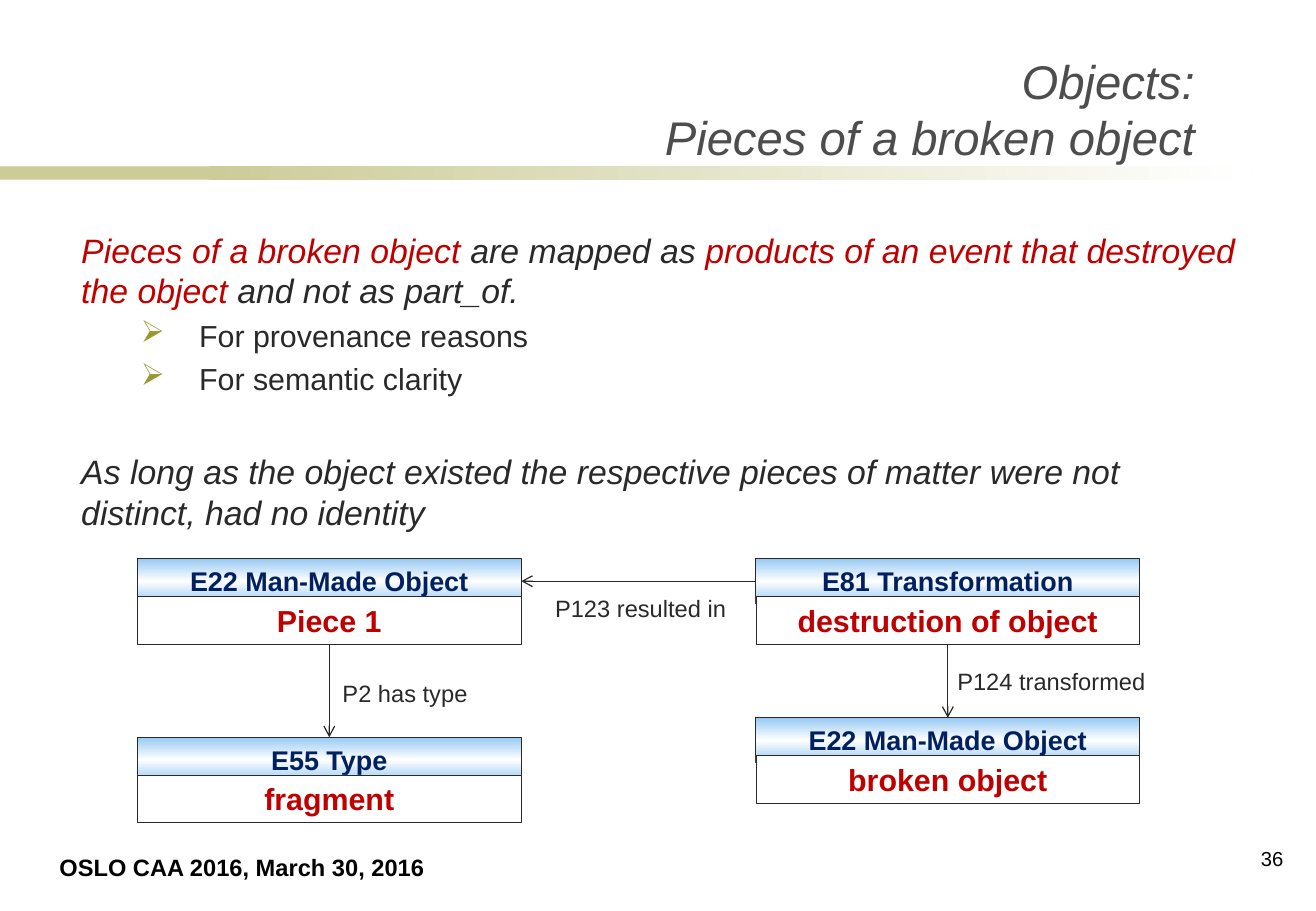
import copy
import pptx
import pptx.util
import pptx.dml.color
import pptx.enum.shapes
import pptx.enum.text
import pptx.oxml.ns
from lxml import etree

Inches, Pt = pptx.util.Inches, pptx.util.Pt
RGBColor = pptx.dml.color.RGBColor
Align = pptx.enum.text.PP_ALIGN
Anchor = pptx.enum.text.MSO_ANCHOR
RECT = pptx.enum.shapes.MSO_SHAPE.RECTANGLE
LINE = pptx.enum.shapes.MSO_CONNECTOR.STRAIGHT
qn = pptx.oxml.ns.qn

BLACK = RGBColor(0x00, 0x00, 0x00)
WHITE = RGBColor(0xFF, 0xFF, 0xFF)
DARK = RGBColor(0x29, 0x29, 0x29)
GREY = RGBColor(0x4D, 0x4D, 0x4D)
RED = RGBColor(0xC0, 0x00, 0x00)
NAVY = RGBColor(0x00, 0x20, 0x60)
SKY = RGBColor(0x97, 0xC9, 0xF3)
SAND = RGBColor(0xCC, 0xCC, 0x99)

deck = pptx.Presentation()
deck.slide_width, deck.slide_height = Inches(10.83), Inches(7.5)
slide = deck.slides.add_slide(deck.slide_layouts[6])
shapes = slide.shapes


def add_run(para, text, size, color, bold=False, italic=False):
    run = para.add_run()
    run.text = text
    font = run.font
    font.name, font.size = "Arial", Pt(size)
    font.bold, font.italic = bold, italic
    font.color.rgb = color


def add_rect(left, top, width, height, colors, angle=0):
    rect = shapes.add_shape(RECT, Inches(left), Inches(top), Inches(width), Inches(height))
    rect.shadow.inherit = False
    rect.line.fill.background()
    fill = rect.fill
    if len(colors) == 1:
        fill.solid()
        fill.fore_color.rgb = colors[0]
        return rect
    fill.gradient()
    fill.gradient_angle = angle
    stops = rect.element.spPr.find(".//" + qn("a:gsLst"))
    for _ in colors[2:]:
        stops.append(copy.deepcopy(stops[0]))
    for i, (stop, color) in enumerate(zip(fill.gradient_stops, colors)):
        stop.position = i / (len(colors) - 1)
        stop.color.rgb = color
    return rect


# Band under the title
add_rect(0, 1.37, 2.53, 0.11, [SAND])
add_rect(1.72, 1.37, 8.58, 0.11, [SAND, WHITE])

# Title
title = shapes.add_textbox(Inches(2.11), Inches(0.13), Inches(7.82), Inches(1.28)).text_frame
title.word_wrap = True
title.vertical_anchor = Anchor.BOTTOM
para = title.paragraphs[0]
para.alignment = Align.RIGHT
add_run(para, "Objects:", 28, GREY, italic=True)
para.add_line_break()
add_run(para, "Pieces of a broken object", 28, GREY, italic=True)

# Body: bullet flag, space before, runs
body = shapes.add_textbox(Inches(0.57), Inches(1.84), Inches(9.75), Inches(2.71)).text_frame
body.word_wrap = True
points = [
    (False, 0, [("Pieces of a broken object ", RED), ("are mapped as ", DARK),
                ("products of an event that destroyed the object ", RED),
                ("and not as part_of.", DARK)]),
    (True, 4, [("For provenance reasons", DARK)]),
    (True, 4, [("For semantic clarity", DARK)]),
    (False, 32, [("As long as the object existed the respective pieces of matter "
                  "were not distinct, had no identity", DARK)]),
]
for i, (bullet, space, runs) in enumerate(points):
    para = body.add_paragraph() if i else body.paragraphs[0]
    para.space_before = Pt(space)
    if bullet:
        props = para._p.get_or_add_pPr()
        props.set("marL", str(Inches(0.97)))
        props.set("indent", str(Inches(-0.48)))
        tint = etree.SubElement(props, qn("a:buClr"))
        etree.SubElement(tint, qn("a:srgbClr"), val="999933")
        etree.SubElement(props, qn("a:buChar"), char="➢")
    for text, color in runs:
        add_run(para, text, 18 if bullet else 20, color, italic=not bullet)

# Entity boxes: class on top, instance below
cards = []
for left, top, kind, name in [
    (1.13, 4.6, "E22 Man-Made Object", "Piece 1"),
    (6.22, 4.6, "E81 Transformation", "destruction of object"),
    (1.13, 6.07, "E55 Type", "fragment"),
    (6.22, 5.91, "E22 Man-Made Object", "broken object"),
]:
    head = add_rect(left, top, 3.16, 0.37, [SKY, WHITE, SKY], 90)
    foot = add_rect(left, top + 0.31, 3.16, 0.39, [WHITE])
    for box, text, size, color, width, anchor in [
        (head, kind, 16, NAVY, 0.75, Anchor.TOP),
        (foot, name, 18, RED, 0.25, Anchor.MIDDLE),
    ]:
        box.line.color.rgb = DARK
        box.line.width = Pt(width)
        frame = box.text_frame
        frame.word_wrap = True
        frame.vertical_anchor = anchor
        frame.margin_left = frame.margin_right = Inches(0.06)
        para = frame.paragraphs[0]
        para.alignment = Align.CENTER
        add_run(para, text, size, color, bold=True)
    cards.append((head, foot))
piece, event, kind, whole = cards

# Arrows between the boxes
for start, out, end, into in [
    (piece[1], 2, kind[0], 0),
    (event[0], 1, piece[0], 3),
    (event[1], 2, whole[0], 0),
]:
    arrow = shapes.add_connector(LINE, 0, 0, 0, 0)
    arrow.begin_connect(start, out)
    arrow.end_connect(end, into)
    arrow.line.color.rgb = DARK
    arrow.line.width = Pt(0.75)
    etree.SubElement(arrow.line._get_or_add_ln(), qn("a:tailEnd"), type="arrow")
    etree.SubElement(arrow.element.spPr, qn("a:effectLst"))

# Arrow labels, footer and page number
for left, top, width, text, size, color, bold, align in [
    (7.78, 5.44, 1.76, "P124 transformed", 14, DARK, False, Align.LEFT),
    (2.72, 5.54, 1.29, "P2 has type", 14, DARK, False, Align.LEFT),
    (4.47, 4.84, 1.67, "P123 resulted in", 14, DARK, False, Align.LEFT),
    (0.39, 6.97, 3.22, "OSLO CAA 2016, March 30, 2016", 14, BLACK, True, Align.LEFT),
    (10.17, 6.92, 0.49, "36", 12, BLACK, False, Align.RIGHT),
]:
    frame = shapes.add_textbox(Inches(left), Inches(top), Inches(width), Inches(0.34)).text_frame
    frame.word_wrap = False
    para = frame.paragraphs[0]
    para.alignment = align
    add_run(para, text, size, color, bold=bold)

deck.save("out.pptx")
